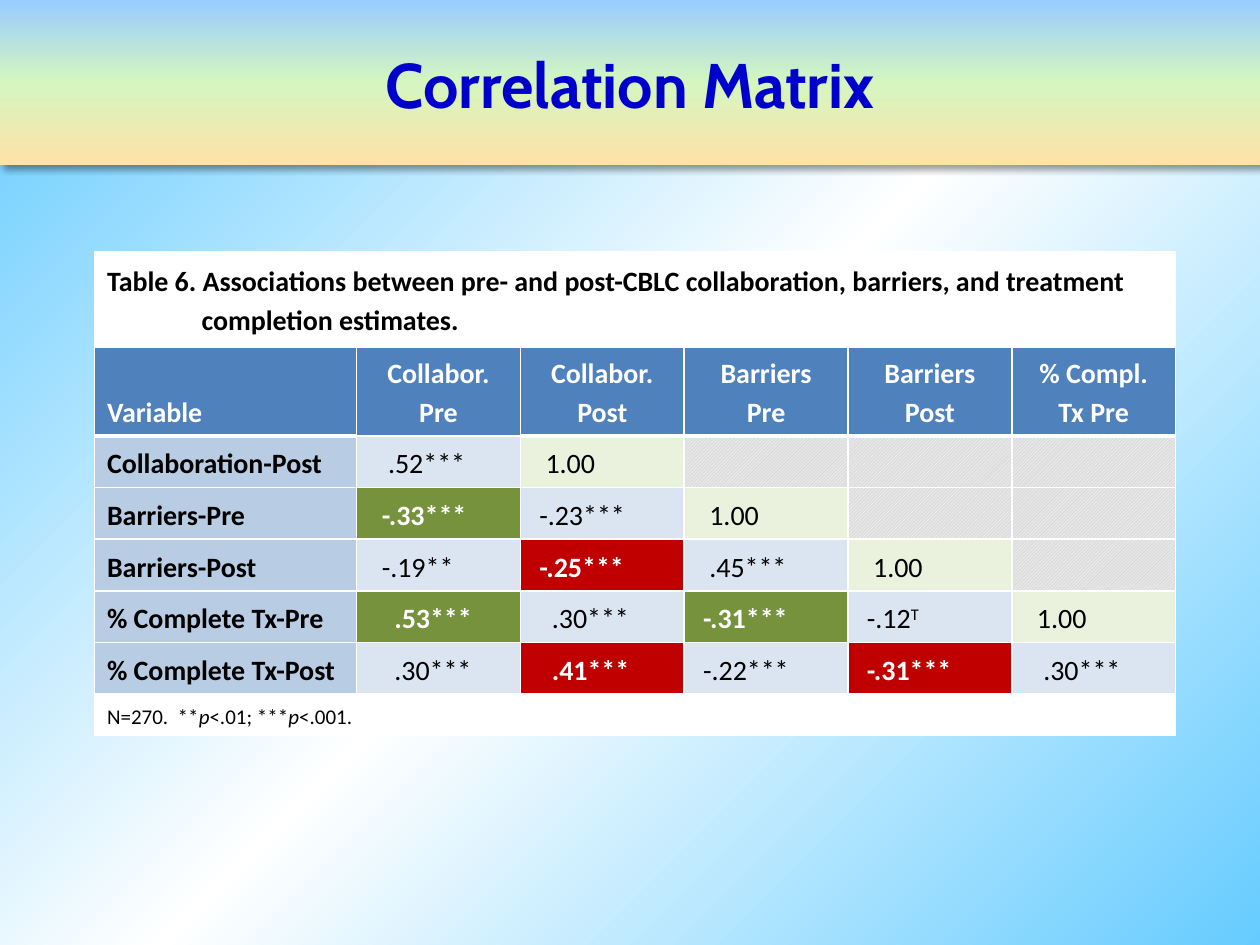
from lxml import etree
from pptx import Presentation
from pptx.dml.color import RGBColor
from pptx.enum import dml, shapes, text
from pptx.oxml.ns import qn
from pptx.util import Inches, Pt

WHITE, BLACK = "FFFFFF", "000000"
HEADER, LABEL, VALUE, DIAGONAL = "4F81BD", "B8CCE4", "DBE5F1", "EAF1DD"
GREEN, RED = "76923C", "C00000"
LEFT, CENTER = text.PP_ALIGN.LEFT, text.PP_ALIGN.CENTER
SPACE = 0.05  # one step of indent that lines up the numbers

COLUMN_WIDTHS = [2.08] + [1.3] * 5
ROW_HEIGHTS = [0.74, 0.72] + [0.41] * 5 + [0.33]
HEADINGS = ["Variable", "Collabor.\nPre", "Collabor. Post", "Barriers\nPre",
            "Barriers\nPost", "% Compl. Tx Pre"]
# Row label, then (value, indent steps, fill) for each filled cell
CORRELATIONS = [
    ("Collaboration-Post", [(".52***", 3, VALUE), ("1.00", 2, DIAGONAL)]),
    ("Barriers-Pre", [("-.33***", 2, GREEN), ("-.23***", 1, VALUE),
                      ("1.00", 2, DIAGONAL)]),
    ("Barriers-Post", [("-.19**", 2, VALUE), ("-.25***", 1, RED),
                       (".45***", 2, VALUE), ("1.00", 2, DIAGONAL)]),
    ("% Complete Tx-Pre", [(".53***", 4, GREEN), (".30***", 3, VALUE),
                           ("-.31***", 1, GREEN), ("-.12", 1, VALUE),
                           ("1.00", 2, DIAGONAL)]),
    ("% Complete Tx-Post", [(".30***", 4, VALUE), (".41***", 3, RED),
                            ("-.22***", 1, VALUE), ("-.31***", 1, RED),
                            (".30***", 3, VALUE)]),
]


def color(value):
    return RGBColor.from_string(value)


def set_gradient(fill, element, colors, angle):
    """Spread the colours evenly along a line at a clockwise angle."""
    fill.gradient()
    fill.gradient_angle = 360 - angle
    stops = element.find(".//" + qn("a:gsLst"))
    for stop in list(stops):
        stops.remove(stop)
    for index, value in enumerate(colors):
        position = 100000 * index // (len(colors) - 1)
        stop = etree.SubElement(stops, qn("a:gs"), pos=str(position))
        etree.SubElement(stop, qn("a:srgbClr"), val=value)


def add_shadow(shape):
    effects = etree.SubElement(shape.element.spPr, qn("a:effectLst"))
    shadow = etree.SubElement(effects, qn("a:outerShdw"), blurRad=str(Pt(4)),
                              dist=str(Pt(3)), dir=str(45 * 60000), rotWithShape="0")
    shade = etree.SubElement(shadow, qn("a:srgbClr"), val=BLACK)
    etree.SubElement(shade, qn("a:alpha"), val="40000")


def set_font(paragraph, name, size, value, bold=False):
    font = paragraph.font
    font.name, font.size, font.bold = name, Pt(size), bold
    font.color.rgb = color(value)


def add_banner(slide):
    banner = slide.shapes.add_shape(shapes.MSO_SHAPE.RECTANGLE, 0, 0,
                                    Inches(10), Inches(1.31))
    banner.line.fill.background()
    set_gradient(banner.fill, banner.element, ["FFE2A7", "D5F6C0", "99CCFF"], 270)
    add_shadow(banner)


def add_title(slide, words):
    box = slide.shapes.add_textbox(Inches(0.5), 0, Inches(9), Inches(1.33))
    frame = box.text_frame
    frame.word_wrap = True
    frame.vertical_anchor = text.MSO_ANCHOR.MIDDLE
    paragraph = frame.paragraphs[0]
    paragraph.text, paragraph.alignment = words, CENTER
    set_font(paragraph, "Cabin", 36, "0000CC", bold=True)


def set_borders(cell, top=1, bottom=1):
    properties = cell._tc.get_or_add_tcPr()
    widths = {"a:lnL": 1, "a:lnR": 1, "a:lnT": top, "a:lnB": bottom}
    for index, (tag, width) in enumerate(widths.items()):
        line = etree.Element(qn(tag), w=str(Pt(width)))
        solid = etree.SubElement(line, qn("a:solidFill"))
        etree.SubElement(solid, qn("a:srgbClr"), val=WHITE)
        properties.insert(index, line)


def fill_cell(cell, words, fill, ink=BLACK, bold=False, size=16, align=LEFT, indent=0):
    cell.fill.solid()
    cell.fill.fore_color.rgb = color(fill)
    cell.margin_left = Inches(0.1 + indent * SPACE)
    cell.text_frame.text = words
    for paragraph in cell.text_frame.paragraphs:
        paragraph.alignment, paragraph.line_spacing = align, 1.15
        set_font(paragraph, "Calibri", size, ink, bold)


def hatch_cell(cell):
    cell.fill.patterned()
    cell.fill.pattern = dml.MSO_PATTERN.LIGHT_UPWARD_DIAGONAL
    cell.fill.fore_color.rgb = color(WHITE)
    cell.fill.back_color.rgb = color("DDDDDD")
    cell.text_frame.paragraphs[0].font.size = Pt(16)


def add_run(paragraph, words, italic=None):
    run = paragraph.add_run()
    run.text, run.font.italic = words, italic
    return run


def add_matrix(slide):
    rows, columns = len(ROW_HEIGHTS), len(COLUMN_WIDTHS)
    frame = slide.shapes.add_table(rows, columns, Inches(0.75), Inches(2),
                                   Inches(sum(COLUMN_WIDTHS)), Inches(sum(ROW_HEIGHTS)))
    table = frame.table
    table.first_row = table.horz_banding = False
    for column, width in zip(table.columns, COLUMN_WIDTHS):
        column.width = Inches(width)
    for row, height in zip(table.rows, ROW_HEIGHTS):
        row.height = Inches(height)

    # Caption across the table, second line indented
    caption = table.cell(0, 0)
    caption.merge(table.cell(0, columns - 1))
    fill_cell(caption, "Table 6. Associations between pre- and post-CBLC collaboration, "
              "barriers, and treatment\ncompletion estimates.", WHITE, bold=True)
    caption.vertical_anchor = text.MSO_ANCHOR.MIDDLE
    second_line = caption.text_frame.paragraphs[1]
    second_line._p.get_or_add_pPr().set("marL", str(Inches(0.75)))

    # Column headings
    for index, heading in enumerate(HEADINGS):
        fill_cell(table.cell(1, index), heading, HEADER, WHITE, True,
                  align=CENTER if index else LEFT)
    table.cell(1, 0).vertical_anchor = text.MSO_ANCHOR.BOTTOM

    # Lower triangle of values, hatched above the diagonal
    for row, (label, values) in enumerate(CORRELATIONS, start=2):
        fill_cell(table.cell(row, 0), label, LABEL, bold=True)
        for column, (value, indent, fill) in enumerate(values, start=1):
            marked = fill in (GREEN, RED)
            fill_cell(table.cell(row, column), value, fill,
                      WHITE if marked else BLACK, marked, indent=indent)
        for column in range(len(values) + 1, columns):
            hatch_cell(table.cell(row, column))
    trend = add_run(table.cell(5, 4).text_frame.paragraphs[0], "T")
    trend.font._element.set("baseline", "30000")

    # Significance note
    note = table.cell(rows - 1, 0)
    note.merge(table.cell(rows - 1, columns - 1))
    fill_cell(note, "N=270.  **", WHITE, size=12)
    paragraph = note.text_frame.paragraphs[0]
    for words, italic in [("p", True), ("<.01; ***", None), ("p", True), ("<.001.", None)]:
        add_run(paragraph, words, italic)

    # White rules, heavy around the heading row
    for row in range(rows):
        for column in range(columns):
            thin = column == 1
            set_borders(table.cell(row, column),
                        top=3 if row == 1 or (row == 2 and not thin) else 1,
                        bottom=3 if row == 0 or (row == 1 and not thin) else 1)


def main():
    presentation = Presentation()
    presentation.slide_width, presentation.slide_height = Inches(10), Inches(7.5)
    slide = presentation.slides.add_slide(presentation.slide_layouts[6])
    set_gradient(slide.background.fill, slide.element, ["66CCFF", WHITE, "66CCFF"], 45)
    add_banner(slide)
    add_title(slide, "Correlation Matrix")
    add_matrix(slide)
    presentation.save("out.pptx")


if __name__ == "__main__":
    main()
